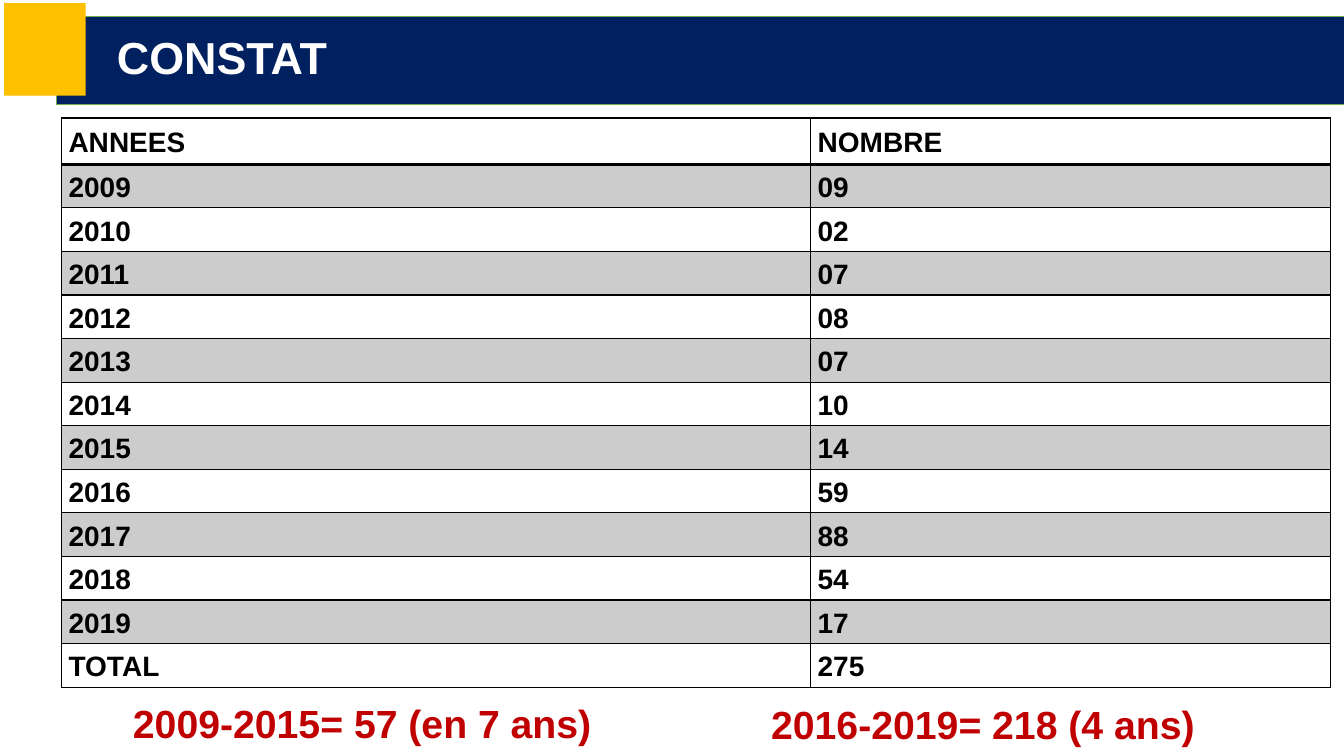
import pptx
import pptx.util
import pptx.dml.color
import pptx.enum.shapes
import pptx.enum.text
import pptx.oxml
import pptx.oxml.ns

Inches = pptx.util.Inches
Pt = pptx.util.Pt
ALIGN = pptx.enum.text.PP_ALIGN
MIDDLE = pptx.enum.text.MSO_ANCHOR.MIDDLE

COLOURS = {
    "navy": "002060",
    "green": "70AD47",
    "gold": "FFC000",
    "black": "000000",
    "white": "FFFFFF",
    "red": "C00000",
}

COUNTS = [
    ("ANNEES", "NOMBRE"),
    ("2009", "09"),
    ("2010", "02"),
    ("2011", "07"),
    ("2012", "08"),
    ("2013", "07"),
    ("2014", "10"),
    ("2015", "14"),
    ("2016", "59"),
    ("2017", "88"),
    ("2018", "54"),
    ("2019", "17"),
    ("TOTAL", "275"),
]


def rgb(name):
    return pptx.dml.color.RGBColor.from_string(COLOURS[name])


def apply(target, values):
    for attribute, value in values.items():
        setattr(target, attribute, value)


def write(frame, text, size, colour, **paragraph_format):
    frame.text = text
    paragraph = frame.paragraphs[0]
    apply(paragraph, paragraph_format)
    apply(paragraph.font, {"name": "Arial", "size": Pt(size), "bold": True})
    paragraph.font.color.rgb = rgb(colour)


def format_title(title):
    apply(title, {"left": Inches(0.56), "top": Inches(0.16),
                  "width": Inches(12.78), "height": Inches(0.88)})
    title.fill.solid()
    title.fill.fore_color.rgb = rgb("navy")
    title.line.color.rgb = rgb("green")
    title.line.width = Pt(0.5)
    margin = Inches(0.13)
    apply(title.text_frame, {
        "margin_left": Inches(0.6), "margin_right": margin,
        "margin_top": margin, "margin_bottom": margin,
        "vertical_anchor": MIDDLE, "word_wrap": True,
        "auto_size": pptx.enum.text.MSO_AUTO_SIZE.NONE,
    })
    write(title.text_frame, "CONSTAT", 32, "white",
          alignment=ALIGN.LEFT, line_spacing=0.9)


def add_square(slide):
    square = slide.shapes.add_shape(
        pptx.enum.shapes.MSO_SHAPE.RECTANGLE,
        Inches(0.04), Inches(0.03), Inches(0.81), Inches(0.92))
    square.shadow.inherit = False
    square.fill.solid()
    square.fill.fore_color.rgb = rgb("gold")
    square.line.fill.background()


def shade(cell):
    cell.fill.solid()
    cell.fill.fore_color.rgb = rgb("black")
    tint = cell._tc.tcPr.find(".//" + pptx.oxml.ns.qn("a:srgbClr"))
    tint.append(pptx.oxml.parse_xml(
        f'<a:alpha {pptx.oxml.ns.nsdecls("a")} val="20000"/>'))


def add_borders(cell, top, bottom):
    widths = {"lnL": 1, "lnR": 1, "lnT": top, "lnB": bottom}
    for position, (side, width) in enumerate(widths.items()):
        cell._tc.get_or_add_tcPr().insert(position, pptx.oxml.parse_xml(
            f'<a:{side} {pptx.oxml.ns.nsdecls("a")} w="{Pt(width)}"><a:solidFill>'
            f'<a:srgbClr val="{COLOURS["black"]}"/></a:solidFill></a:{side}>'))


def add_counts(slide):
    table = slide.shapes.add_table(
        len(COUNTS), 2, Inches(0.61), Inches(1.17),
        Inches(12.59), Inches(5.65)).table
    table.horz_banding = False
    for column, width in zip(table.columns, (7.43, 5.16)):
        column.width = Inches(width)
    for index, values in enumerate(COUNTS):
        table.rows[index].height = Inches(0.46 if index == 0 else 5.19 / 12)
        for cell, value in zip(table.rows[index].cells, values):
            apply(cell, {
                "margin_left": Inches(0.07), "margin_right": Inches(0.07),
                "margin_top": Inches(0.01), "margin_bottom": 0,
                "vertical_anchor": MIDDLE,
            })
            write(cell.text_frame, value, 20, "black", alignment=ALIGN.JUSTIFY,
                  line_spacing=1.07, space_after=Pt(8))
            if index % 2:
                shade(cell)
            else:
                cell.fill.background()
            add_borders(cell, 2 if index == 1 else 1, 2 if index == 0 else 1)


def add_summary(slide, left, top, text):
    summary = slide.shapes.add_textbox(
        Inches(left), Inches(top), Inches(4.95), Inches(0.57))
    summary.text_frame.word_wrap = True
    summary.text_frame.auto_size = pptx.enum.text.MSO_AUTO_SIZE.SHAPE_TO_FIT_TEXT
    write(summary.text_frame, text, 28, "red")


def main():
    deck = pptx.Presentation()
    deck.slide_width = Inches(13.33)
    deck.slide_height = Inches(7.5)
    slide = deck.slides.add_slide(deck.slide_layouts[5])
    format_title(slide.shapes.title)
    add_square(slide)
    add_counts(slide)
    add_summary(slide, 1.22, 6.89, "2009-2015= 57 (en 7 ans)")
    add_summary(slide, 7.55, 6.9, "2016-2019= 218 (4 ans)")
    deck.save("out.pptx")


if __name__ == "__main__":
    main()
